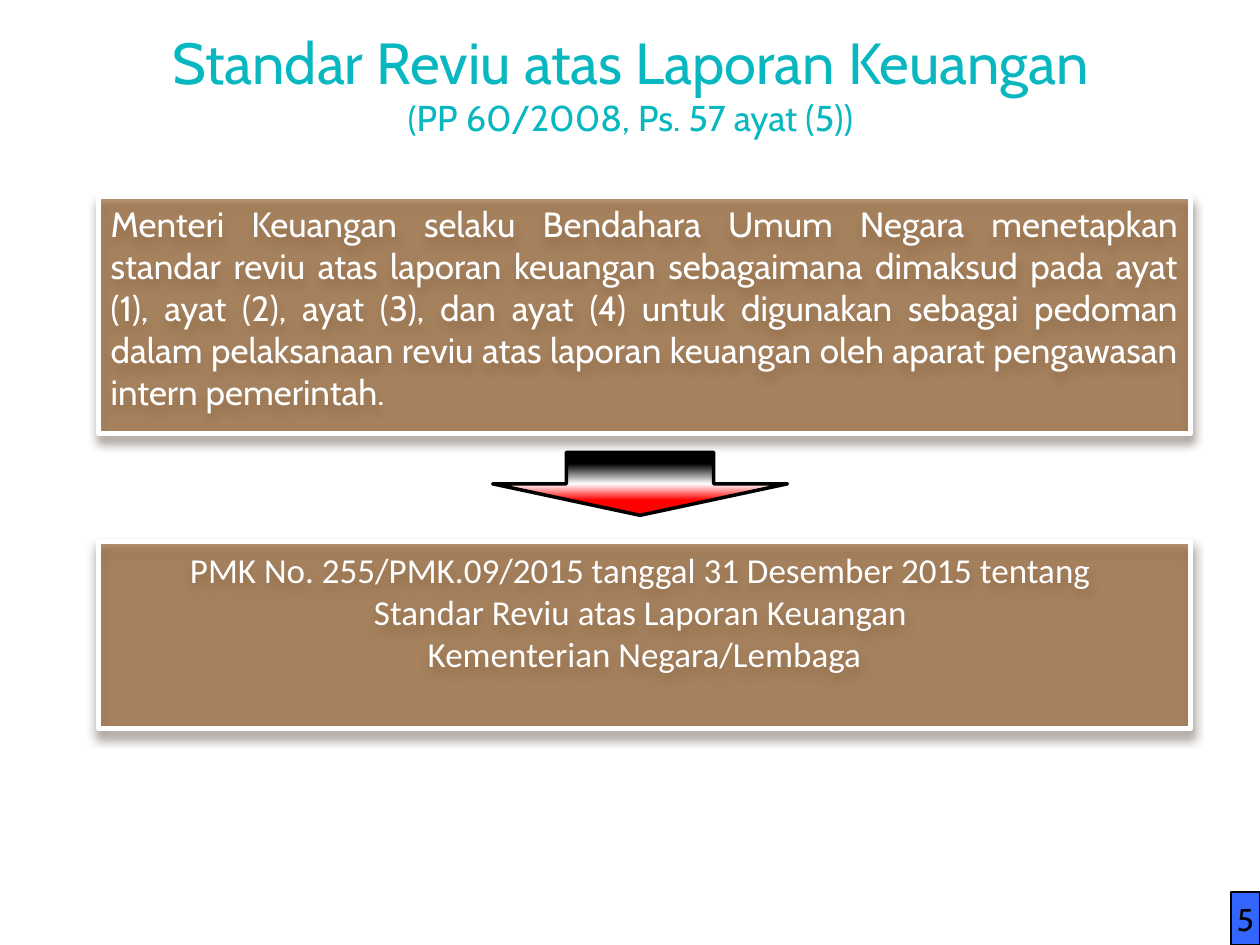
import copy

import pptx
import pptx.dml.color
import pptx.enum.shapes
import pptx.enum.text
import pptx.oxml
import pptx.oxml.ns
import pptx.util

Inches, Pt = pptx.util.Inches, pptx.util.Pt
SHAPE = pptx.enum.shapes.MSO_SHAPE
ALIGN = pptx.enum.text.PP_ALIGN
ANCHOR = pptx.enum.text.MSO_ANCHOR
qn = pptx.oxml.ns.qn

COLORS = {
    "title": "08B7BF",
    "panel": "91581F",
    "shadow": "4E3B30",
    "badge": "3366FF",
    "red": "FF0000",
    "white": "FFFFFF",
    "black": "000000",
}

RULE_TEXT = (
    "Menteri Keuangan selaku Bendahara Umum Negara menetapkan standar reviu "
    "atas laporan keuangan sebagaimana dimaksud pada ayat (1), ayat (2), "
    "ayat (3), dan ayat (4) untuk digunakan sebagai pedoman dalam pelaksanaan "
    "reviu atas laporan keuangan oleh aparat pengawasan intern pemerintah."
)
DECREE_LINES = [
    "PMK No. 255/PMK.09/2015 tanggal 31 Desember 2015 tentang ",
    "Standar Reviu atas Laporan Keuangan ",
    "Kementerian Negara/Lembaga",
]


def rgb(name):
    return pptx.dml.color.RGBColor.from_string(COLORS[name])


def style_font(font, size, color, name="Cabin"):
    font.size = Pt(size)
    font.name = name
    font.color.rgb = rgb(color)


def add_outlined(slide, kind, box, line, width):
    sp = slide.shapes.add_shape(kind, *map(Inches, box))
    sp.shadow.inherit = False
    sp.line.color.rgb = rgb(line)
    sp.line.width = Pt(width)
    return sp


def add_lines(tf, lines, align, size, color, name="Cabin"):
    for i, line in enumerate(lines):
        p = tf.add_paragraph() if i else tf.paragraphs[0]
        p.text = line
        p.alignment = align
        style_font(p.font, size, color, name)


def add_title(slide, box):
    tf = slide.shapes.add_textbox(*map(Inches, box)).text_frame
    tf.word_wrap = True
    add_lines(tf, ["Standar Reviu atas Laporan Keuangan"], ALIGN.CENTER, 33.1, "title")
    p = tf.add_paragraph()
    p.alignment = ALIGN.CENTER
    for text, size in (("(", 19.5), ("PP 60/2008, Ps. 57 ayat (5))", 20.5)):
        r = p.add_run()
        r.text = text
        style_font(r.font, size, "title")


def add_panel(slide, box, lines, align, font_name):
    """Translucent brown box with a white frame and a soft shadow below."""
    sp = add_outlined(slide, SHAPE.RECTANGLE, box, "white", 3)
    sp.fill.solid()
    sp.fill.fore_color.rgb = rgb("panel")
    sppr = sp._element.spPr
    fill_color = sppr.find(qn("a:solidFill")).find(qn("a:srgbClr"))
    fill_color.append(pptx.oxml.parse_xml(
        f'<a:alpha {pptx.oxml.ns.nsdecls("a")} val="58000"/>'))
    sppr.find(qn("a:effectLst")).append(pptx.oxml.parse_xml(
        f'<a:outerShdw {pptx.oxml.ns.nsdecls("a")} blurRad="{Pt(6)}" dist="{Pt(4)}" '
        f'dir="5400000" rotWithShape="0"><a:srgbClr val="{COLORS["shadow"]}">'
        '<a:alpha val="60000"/></a:srgbClr></a:outerShdw>'))
    tf = sp.text_frame
    tf.word_wrap = True
    tf.vertical_anchor = ANCHOR.TOP
    add_lines(tf, lines, align, 20, "white", font_name)


def add_gradient_arrow(slide, box):
    sp = add_outlined(slide, SHAPE.DOWN_ARROW, box, "black", 2)
    sp.fill.gradient()
    sp.fill.gradient_angle = 90
    stop_list = sp._element.spPr.find(qn("a:gradFill")).find(qn("a:gsLst"))
    stop_list.append(copy.deepcopy(stop_list[-1]))
    stops = ((0.24, "red"), (0.5, "white"), (0.82, "black"))
    for stop, (position, color) in zip(sp.fill.gradient_stops, stops):
        stop.position = position
        stop.color.rgb = rgb(color)


def add_page_badge(slide, box, number):
    sp = add_outlined(slide, SHAPE.RECTANGLE, box, "black", 0.75)
    sp.fill.solid()
    sp.fill.fore_color.rgb = rgb("badge")
    tf = sp.text_frame
    tf.word_wrap = False
    tf.vertical_anchor = ANCHOR.MIDDLE
    add_lines(tf, [number], ALIGN.CENTER, 18, "black")


def main():
    prs = pptx.Presentation()
    prs.slide_width, prs.slide_height = Inches(10), Inches(7.5)
    slide = prs.slides.add_slide(prs.slide_layouts[6])
    left, width = 0.78, 8.67
    add_panel(slide, (left, 1.56, width, 1.88), [RULE_TEXT], ALIGN.JUSTIFY, "Cabin")
    add_page_badge(slide, (9.77, 7.08, 0.23, 0.42), "5")
    add_title(slide, (0.67, 0.16, width, 1.33))
    add_gradient_arrow(slide, (3.91, 3.59, 2.34, 0.5))
    add_panel(slide, (left, 4.3, width, 1.48), DECREE_LINES, ALIGN.CENTER, "Calibri")
    prs.save("out.pptx")


if __name__ == "__main__":
    main()
